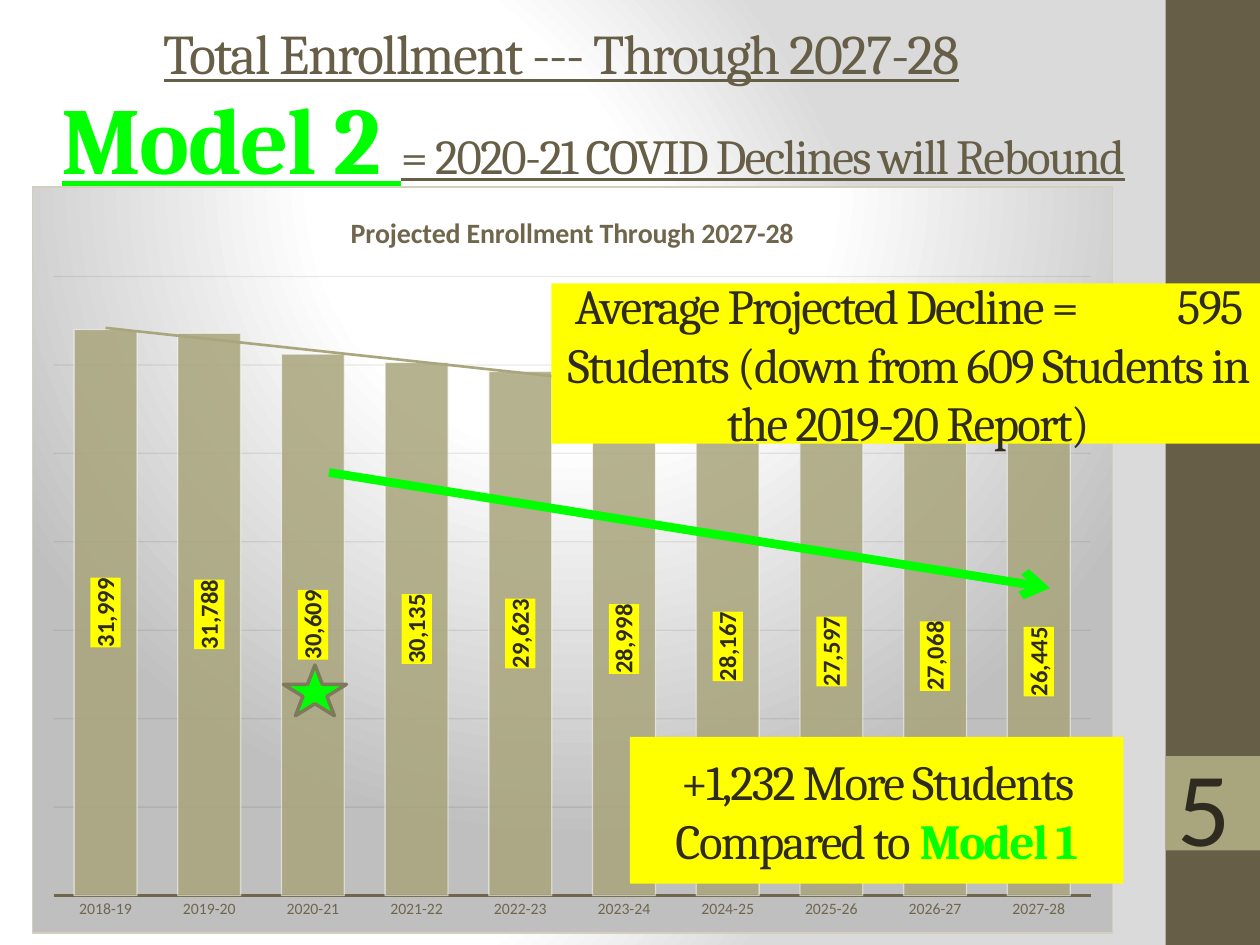
from lxml.etree import fromstring, SubElement
from pptx import Presentation
from pptx.chart.data import CategoryChartData
from pptx.dml.color import RGBColor
from pptx.enum.chart import XL_CHART_TYPE, XL_LABEL_POSITION, XL_TICK_MARK
from pptx.enum.shapes import MSO_CONNECTOR, MSO_SHAPE
from pptx.enum.text import MSO_ANCHOR, MSO_AUTO_SIZE, PP_ALIGN
from pptx.oxml.ns import nsdecls, qn
from pptx.util import Pt

BROWN, KHAKI, INK, LABEL = "675E47", "A9A57C", "2F2B20", "6F664C"
GREEN, YELLOW = "00FF00", "FFFF00"
SERIF = {"name": "Cambria", "size": Pt(28), "bold": False}
ENROLLMENT = {
    "2018-19": 31999, "2019-20": 31788, "2020-21": 30609, "2021-22": 30135,
    "2022-23": 29623, "2023-24": 28998, "2024-25": 28167, "2025-26": 27597,
    "2026-27": 27068, "2027-28": 26445,
}


def rgb(code):
    """Turn a hex string into a colour."""
    return RGBColor.from_string(code)


def set_values(target, values):
    """Set every attribute named in a dict."""
    for name, value in values.items():
        setattr(target, name, value)


def points(*lengths):
    """Turn plain numbers into lengths in points."""
    return [Pt(length) for length in lengths]


def paint(fill, code):
    """Give a fill one solid colour."""
    fill.solid()
    fill.fore_color.rgb = rgb(code)


def style_line(line, code, width):
    """Give a line its colour and width."""
    paint(line.fill, code)
    line.width = Pt(width)


def make_transparent(element, percent):
    """Set the opacity of the first colour within an element."""
    color = next(element.iter(qn("a:srgbClr")))
    SubElement(color, qn("a:alpha")).set("val", str(percent * 1000))


def radial_gradient(stops, focus):
    """Build a circular gradient from stops and a focus rectangle."""
    colors = "".join(
        f'<a:gs pos="{place * 1000}"><a:srgbClr val="{code}"/></a:gs>' for place, code in stops)
    edges = " ".join(f'{side}="{value * 1000}"' for side, value in zip("ltrb", focus))
    return (f'<a:gradFill {nsdecls("a")} rotWithShape="1"><a:gsLst>{colors}</a:gsLst>'
            f'<a:path path="circle"><a:fillToRect {edges}/></a:path></a:gradFill>')


def line_xml(code, width):
    """Build a solid outline."""
    return (f'<a:ln {nsdecls("a")} w="{Pt(width)}"><a:solidFill>'
            f'<a:srgbClr val="{code}"/></a:solidFill></a:ln>')


def chart_part(tag, content):
    """Build a chart element around its content."""
    return fromstring(f'<c:{tag} {nsdecls("c", "a")}>{content}</c:{tag}>')


def set_background(page):
    """Fill the page with a soft white to grey gradient."""
    page.background.fill.gradient()
    old = next(page.element.iter(qn("a:gradFill")))
    stops = [(0, "FFFFFF"), (75, "FFFFFF"), (100, "DADADA")]
    old.getparent().replace(old, fromstring(radial_gradient(stops, (20, 50, 100, 50))))


def write(box, spans, align=PP_ALIGN.CENTER, anchor=MSO_ANCHOR.MIDDLE):
    """Write one paragraph of (text, colour, spacing, font values) spans."""
    set_values(box.text_frame, {"word_wrap": True, "vertical_anchor": anchor,
                                "auto_size": MSO_AUTO_SIZE.NONE})
    para = box.text_frame.paragraphs[0]
    para.alignment = align
    for text, code, spacing, values in spans:
        span = para.add_run()
        span.text = text
        set_values(span.font, values)
        span.font.color.rgb = rgb(code)
        span.font._element.set("spc", str(spacing * 100))


def add_block(page, kind, place, code):
    """Add a filled preset shape without an outline."""
    block = page.shapes.add_shape(kind, *points(*place))
    block.shadow.inherit = False
    paint(block.fill, code)
    block.line.fill.background()
    return block


def add_arrow(page, start, end):
    """Add a thick green arrow."""
    arrow = page.shapes.add_connector(MSO_CONNECTOR.STRAIGHT, *points(*start, *end))
    style_line(arrow.line, GREEN, 5)
    SubElement(arrow.line._get_or_add_ln(), qn("a:tailEnd")).set("type", "arrow")
    SubElement(arrow._element.spPr, qn("a:effectLst"))


def style_series(series):
    """Colour the columns and add their trend line and labels."""
    paint(series.format.fill, KHAKI)
    style_line(series.format.line, "FFFFFF", 0.75)
    shape = series._element.spPr
    make_transparent(shape.find(qn("a:solidFill")), 85)
    make_transparent(shape.find(qn("a:ln")), 50)
    labels = series.data_labels
    set_values(labels, {"show_value": True, "position": XL_LABEL_POSITION.CENTER,
                        "number_format": "#,##0", "number_format_is_linked": False})
    set_values(labels.font, {"name": "Calibri", "size": Pt(14), "bold": True})
    labels.font.color.rgb = rgb(INK)
    text = labels._element.find(qn("c:txPr"))
    set_rotation = text.find(qn("a:bodyPr")).set
    set_rotation("rot", "-5400000")
    set_rotation("vert", "horz")
    text.addprevious(chart_part(
        "spPr", f'<a:solidFill><a:srgbClr val="{YELLOW}"/></a:solidFill>'))
    trend = chart_part("trendline", f'<c:spPr>{line_xml(KHAKI, 1.5)}</c:spPr>'
                       '<c:trendlineType val="linear"/><c:dispRSqr val="0"/><c:dispEq val="0"/>')
    series._element.find(qn("c:cat")).addprevious(trend)


def style_axes(chart):
    """Show the years and gridlines and hide the value scale."""
    years, scale = chart.category_axis, chart.value_axis
    years.major_tick_mark = XL_TICK_MARK.NONE
    set_values(years.tick_labels.font, {"name": "Calibri", "size": Pt(9)})
    years.tick_labels.font.color.rgb = rgb(LABEL)
    style_line(years.format.line, LABEL, 1.5)
    set_values(scale, {"visible": False, "minimum_scale": 0, "maximum_scale": 35000,
                       "major_unit": 5000, "has_major_gridlines": True})
    style_line(scale.major_gridlines.format.line, "3C3729", 0.75)
    make_transparent(scale._element.find(qn("c:majorGridlines")), 10)


def style_frame(chart):
    """Fill the chart frame and fix the plot position."""
    stops = [(0, "FFFFFF"), (39, "FFFFFF"), (100, "BFBFBF")]
    frame = radial_gradient(stops, (50, -80, 50, 180)) + line_xml("D3CEBF", 0.75)
    area = chart._chartSpace.find(qn("c:chart"))
    area.addnext(chart_part("spPr", frame))
    plot_area = area.find(qn("c:plotArea"))
    for layout in plot_area.findall(qn("c:layout")):
        plot_area.remove(layout)
    sizes = "".join(f'<c:{name} val="{value}"/>' for name, value in
                    zip("xywh", (0.02, 0.12, 0.96, 0.83)))
    plot_area.insert(0, chart_part(
        "layout", '<c:manualLayout><c:layoutTarget val="inner"/><c:xMode val="edge"/>'
        f'<c:yMode val="edge"/>{sizes}</c:manualLayout>'))


def add_enrollment_chart(page):
    """Add the column chart of projected enrollment."""
    data = CategoryChartData(number_format="#,##0")
    data.categories = list(ENROLLMENT)
    data.add_series("Series 1", list(ENROLLMENT.values()))
    chart = page.shapes.add_chart(
        XL_CHART_TYPE.COLUMN_CLUSTERED, *points(18, 106.5, 618, 427), data).chart
    set_values(chart, {"has_legend": False, "has_title": True})
    set_values(chart.font, {"name": "Calibri", "size": Pt(10)})
    chart.font.color.rgb = rgb(INK)
    write(chart.chart_title, [("Projected Enrollment Through 2027-28", LABEL, 0,
                               {"name": "Calibri", "size": Pt(16), "bold": True})])
    set_values(chart.plots[0], {"gap_width": 65, "vary_by_categories": False})
    style_series(chart.plots[0].series[0])
    style_axes(chart)
    style_frame(chart)


def main():
    """Build and save the enrollment slide."""
    deck = Presentation()
    set_values(deck, {"slide_width": Pt(720), "slide_height": Pt(540)})
    page = deck.slides.add_slide(deck.slide_layouts[5])
    set_background(page)
    add_block(page, MSO_SHAPE.RECTANGLE, (666, 0, 54, 540), BROWN)
    add_block(page, MSO_SHAPE.RECTANGLE, (666, 432, 54, 54), KHAKI)
    add_enrollment_chart(page)

    title = page.shapes.title
    set_values(title, dict(zip(("left", "top", "width", "height"), points(12, 0, 618, 60))))
    underlined = {**SERIF, "underline": True}
    write(title, [("Total Enrollment --- Through 2027-28", BROWN, -1,
                   {**underlined, "size": Pt(32)})])
    number = page.shapes.add_textbox(*points(666, 420, 42, 80))
    write(number, [("5", INK, 0, {"name": "Calibri", "size": Pt(60)})],
          PP_ALIGN.LEFT, MSO_ANCHOR.TOP)
    model = page.shapes.add_textbox(*points(-33, 48, 744, 60))
    write(model, [("Model 2 ", GREEN, -1, {**underlined, "size": Pt(54), "bold": True}),
                  ("= 2020-21 COVID Declines will Rebound", BROWN, -1, underlined)])

    decline = add_block(page, MSO_SHAPE.RECTANGLE, (315, 162, 408, 91.5), YELLOW)
    write(decline, [("Average Projected Decline =", INK, -1, SERIF), (" ", INK, 50, SERIF),
                    ("595 Students (down from 609 Students in the 2019-20 Report)",
                     INK, -1, SERIF)])
    star = add_block(page, MSO_SHAPE.STAR_5_POINT, (162, 380, 36, 29), GREEN)
    style_line(star.line, "7D7A5C", 2)
    add_arrow(page, (188, 270), (600, 336))
    gain = add_block(page, MSO_SHAPE.RECTANGLE, (360, 421, 282, 84), YELLOW)
    write(gain, [("+1,232 More Students Compared to ", INK, -1, SERIF),
                 ("Model 1", GREEN, -1, {**SERIF, "bold": True})])
    deck.save("out.pptx")


if __name__ == "__main__":
    main()
